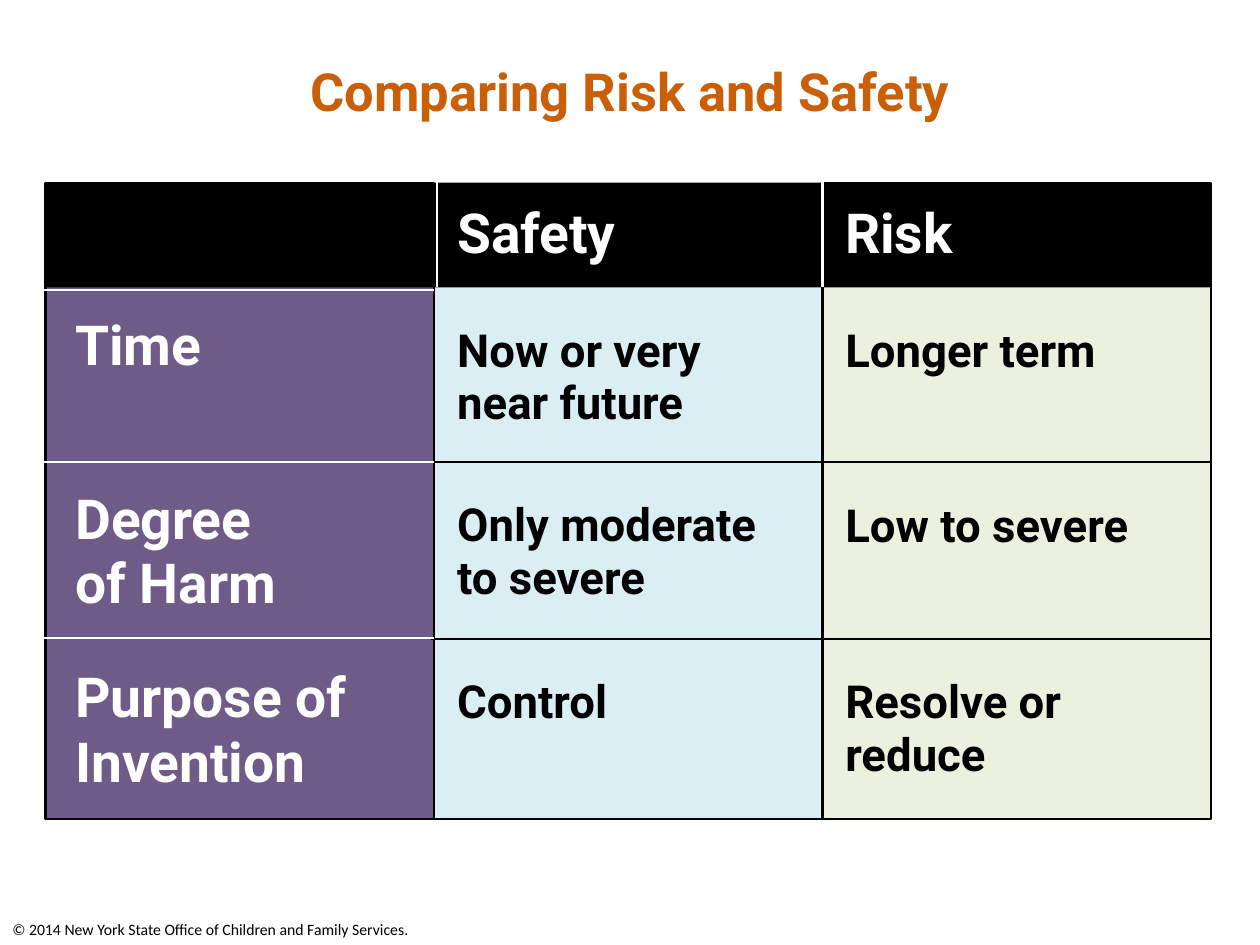
from dataclasses import dataclass
from typing import Optional

from lxml import etree
from pptx import Presentation
from pptx import util as u
from pptx.dml.color import RGBColor
from pptx.enum import shapes, text
from pptx.oxml import ns

Pt = u.Pt
BLACK = RGBColor(0x00, 0x00, 0x00)
WHITE = RGBColor(0xFF, 0xFF, 0xFF)
ORANGE = RGBColor(0xC9, 0x60, 0x09)
PURPLE = RGBColor(0x60, 0x4A, 0x7B)
BLUE = RGBColor(0xDB, 0xEE, 0xF4)
GREEN = RGBColor(0xEB, 0xF1, 0xDE)

# Grid of the comparison, in points
LEFT, COL, TOP, BASE = 26, 222, 104.4, 468
EDGES = [LEFT + COL * i for i in range(4)]
RULE = 1.25


@dataclass
class Panel:
    x: float
    y: float
    w: float
    h: float
    fill: RGBColor
    edge: Optional[RGBColor] = BLACK
    alpha: int = 100


@dataclass
class Rule:
    x1: float
    y1: float
    x2: float
    y2: float
    color: RGBColor


@dataclass
class Para:
    words: str
    font: dict
    form: dict


@dataclass
class Block:
    x: float
    y: float
    w: float
    h: float
    paras: list[Para]


def apply(target, values: dict) -> None:
    for name, value in values.items():
        setattr(target, name, value)


def face(size: float, color: RGBColor, name: str = "Roboto", bold: bool = True) -> dict:
    return {"size": Pt(size), "name": name, "bold": bold, "color": color}


def gaps(line: float, after: float, before: float = 0) -> dict:
    return {"line_spacing": Pt(line), "space_after": Pt(after), "space_before": Pt(before)}


def draw_panel(slide, item: Panel) -> None:
    box = slide.shapes.add_shape(
        shapes.MSO_SHAPE.RECTANGLE, Pt(item.x), Pt(item.y), Pt(item.w), Pt(item.h))
    box.shadow.inherit = False
    box.fill.solid()
    box.fill.fore_color.rgb = item.fill
    if item.alpha < 100:
        color = box._element.spPr.find(".//" + ns.qn("a:srgbClr"))
        etree.SubElement(color, ns.qn("a:alpha"), val=str(item.alpha * 1000))
    if item.edge is None:
        box.line.fill.background()
    else:
        box.line.color.rgb = item.edge
        box.line.width = Pt(RULE)


def draw_rule(slide, item: Rule) -> None:
    line = slide.shapes.add_connector(
        shapes.MSO_CONNECTOR.STRAIGHT, Pt(item.x1), Pt(item.y1), Pt(item.x2), Pt(item.y2))
    line.line.color.rgb = item.color
    line.line.width = Pt(RULE)
    etree.SubElement(line._element.spPr, ns.qn("a:effectLst"))


def draw_block(slide, item: Block) -> None:
    box = slide.shapes.add_textbox(Pt(item.x), Pt(item.y), Pt(item.w), Pt(item.h))
    frame = box.text_frame
    frame.word_wrap = True
    for i, para in enumerate(item.paras):
        p = frame.paragraphs[0] if i == 0 else frame.add_paragraph()
        p.text = para.words
        apply(p, para.form)
        for run in p.runs:
            apply(run.font, {k: v for k, v in para.font.items() if k != "color"})
            run.font.color.rgb = para.font["color"]


def column(head: str, cells: list[str], after: float, befores: list[float]) -> list[Para]:
    body = [Para(words, face(26, BLACK), gaps(30, after, before))
            for words, before in zip(cells, befores)]
    return [Para(head, face(31.5, WHITE), gaps(25, 34))] + body


def main() -> None:
    deck = Presentation()
    deck.slide_width, deck.slide_height = Pt(720), Pt(540)
    slide = deck.slides.add_slide(deck.slide_layouts[6])

    # Footer and title
    draw_block(slide, Block(0, 522, 720, 18, [Para(
        "© 2014 New York State Office of Children and Family Services.",
        face(9, BLACK, "Calibri", False), {})]))
    draw_block(slide, Block(0, 30.2, 720, 66, [Para(
        "Comparing Risk and Safety", face(30, ORANGE),
        {"alignment": text.PP_ALIGN.CENTER})]))

    # Column panels, header rule and header band
    draw_panel(slide, Panel(EDGES[2], TOP, COL, BASE - TOP, GREEN))
    draw_panel(slide, Panel(EDGES[1], 114.5, COL, BASE - 114.5, BLUE))
    draw_panel(slide, Panel(EDGES[0], TOP, COL, BASE - TOP, PURPLE, alpha=90))
    draw_rule(slide, Rule(EDGES[0], 163, EDGES[3], 163, BLACK))
    draw_panel(slide, Panel(LEFT, TOP, 3 * COL, 59.8, BLACK, edge=None))

    # Row labels and column text
    labels = [("Time", 62), ("Degree\nof Harm", 28), ("Purpose of\nInvention", 28)]
    draw_block(slide, Block(36, 174.8, 210, 304.8, [
        Para(words, face(31.5, WHITE), gaps(37, after)) for words, after in labels]))
    draw_block(slide, Block(254.2, 122.4, 216, 365.8, column(
        "Safety", ["Now or very\nnear future", "Only moderate\nto severe", "Control"],
        28, [0, 12, 13])))
    draw_block(slide, Block(476, 122.4, 201.6, 378, column(
        "Risk", ["Longer term", "Low to severe", "Resolve or\nreduce"],
        50, [0, 20, 21])))

    # White dividers in the header
    for x in (249.8, EDGES[2]):
        draw_rule(slide, Rule(x, 98, x, 164.2, WHITE))

    # Row dividers: white across the labels, black across the cells
    for y in (365, 264.2):
        draw_rule(slide, Rule(246.2, y, EDGES[3], y, BLACK))
    for y in (364.5, 165.6, 264.2):
        draw_rule(slide, Rule(12.2, y, EDGES[1], y, WHITE))

    deck.save("out.pptx")


if __name__ == "__main__":
    main()
